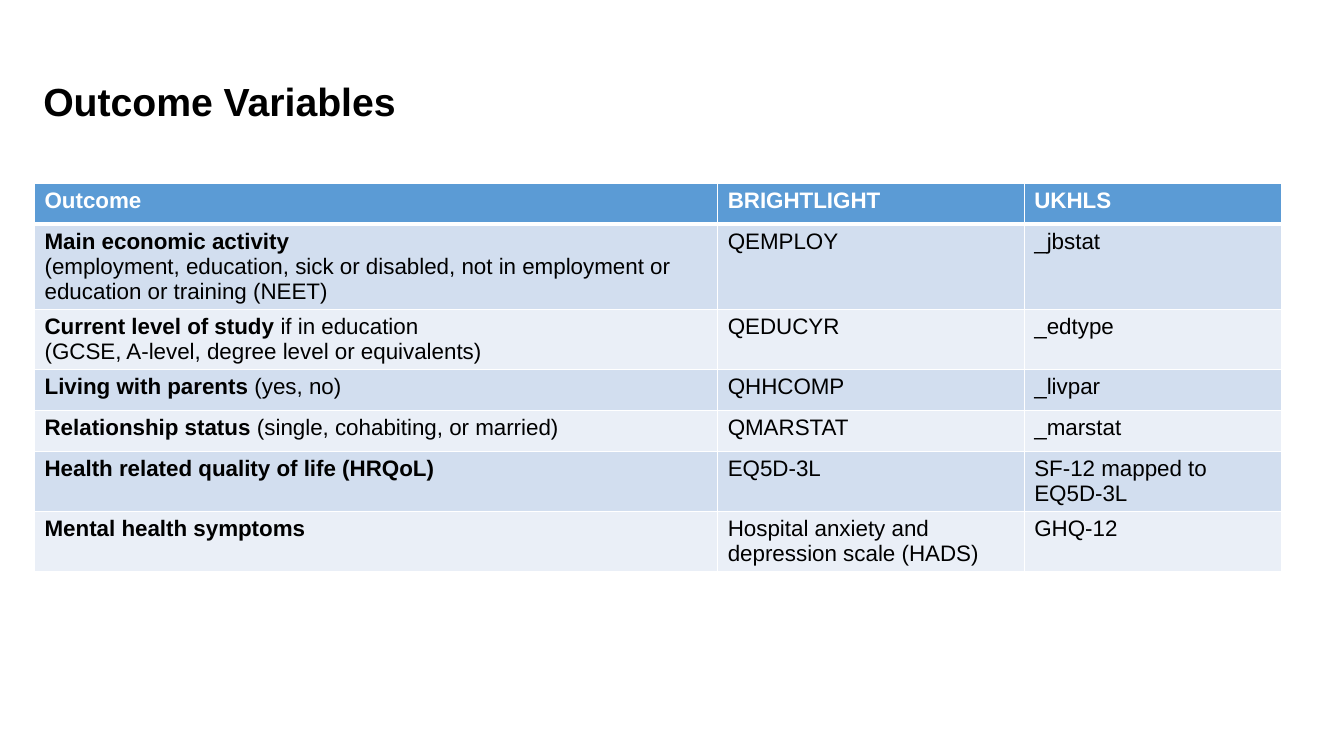
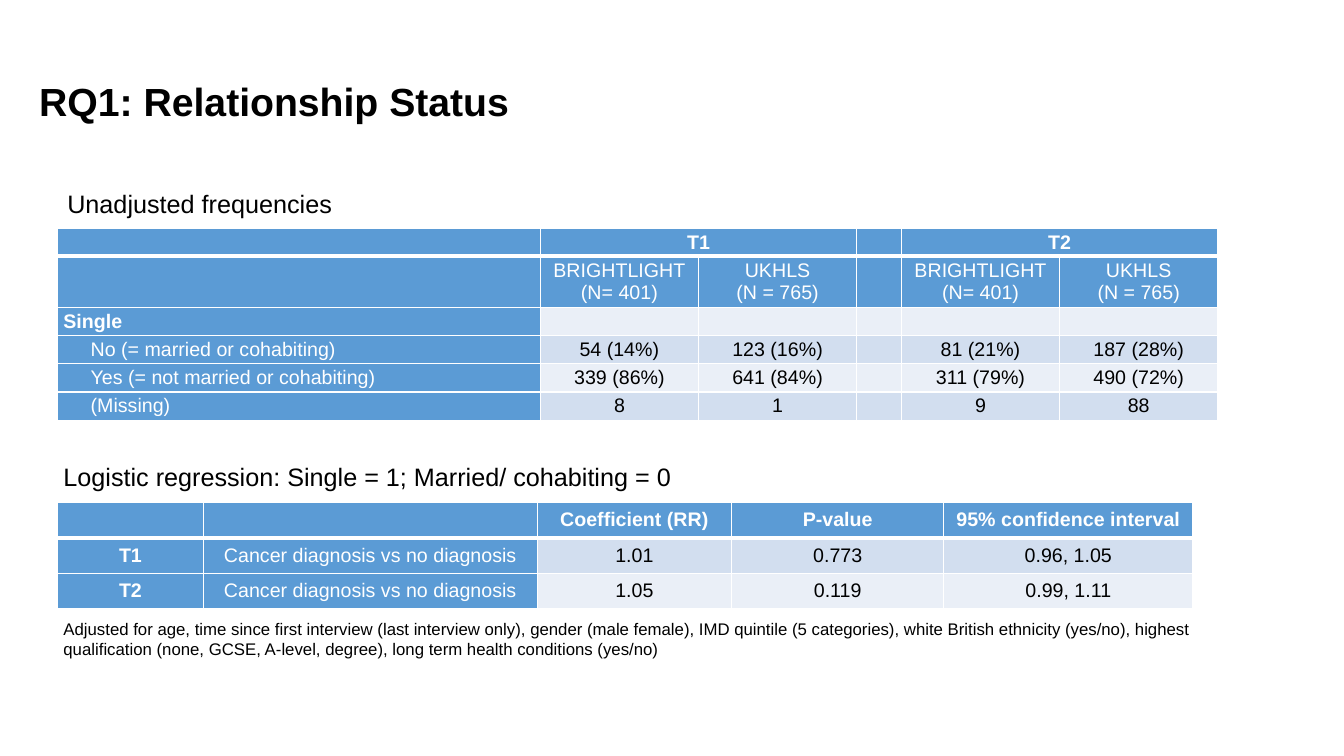
import dataclasses

import lxml.etree
import pptx
import pptx.dml.color
import pptx.enum.text
import pptx.oxml.ns
import pptx.util

Pt = pptx.util.Pt
RGB = pptx.dml.color.RGBColor.from_string
qn = pptx.oxml.ns.qn
ALIGN = pptx.enum.text.PP_ALIGN
ANCHOR = pptx.enum.text.MSO_ANCHOR


@dataclasses.dataclass(frozen=True)
class Theme:
    font: str = "Arial"
    ink: str = "000000"
    paper: str = "FFFFFF"
    accent: str = "5B9BD5"
    bands: tuple = ("EAEFF7", "D2DEEF")
    title: int = 28
    caption: int = 18
    table: int = 16
    compact: int = 14
    note: int = 12
    rule: int = 1
    header_rule: int = 3


THEME = Theme()
ROOMY = {
    "size": THEME.table,
    "align": ALIGN.LEFT,
    "cell": {"vertical_anchor": ANCHOR.TOP},
}
COMPACT = {
    "size": THEME.compact,
    "align": ALIGN.CENTER,
    "cell": {
        "vertical_anchor": ANCHOR.MIDDLE,
        "margin_left": Pt(4.3),
        "margin_right": Pt(4.3),
        "margin_top": Pt(1.4),
        "margin_bottom": Pt(1.4),
    },
}

OUTCOMES = [
    ["Outcome", "BRIGHTLIGHT", "UKHLS"],
    ["Main economic activity|\n(employment, education, sick or disabled, "
     "not in employment or education or training (NEET)", "QEMPLOY", "_jbstat"],
    ["Current level of study |if in education\n"
     "(GCSE, A-level, degree level or equivalents)", "QEDUCYR", "_edtype"],
    ["Living with parents |(yes, no)", "QHHCOMP", "_livpar"],
    ["Relationship status |(single, cohabiting, or married)", "QMARSTAT", "_marstat"],
    ["Health related quality of life (HRQoL)|", "EQ5D-3L", "SF-12 mapped to EQ5D-3L"],
    ["Mental health symptoms|", "Hospital anxiety and depression scale (HADS)", "GHQ-12"],
]
GROUPS = ["BRIGHTLIGHT\n(N= 401)", "UKHLS\n(N = 765)"]
FREQUENCIES = [
    ["", "T1", "", "", "T2", ""],
    ["", *GROUPS, "", *GROUPS],
    ["Single|", "", "", "", "", ""],
    ["No (= married or cohabiting)", "54 (14%)", "123 (16%)", "", "81 (21%)", "187 (28%)"],
    ["Yes (= not married or cohabiting)", "339 (86%)", "641 (84%)", "", "311 (79%)", "490 (72%)"],
    ["(Missing)", "8", "1", "", "9", "88"],
]
COMPARISON = "Cancer diagnosis vs no diagnosis"
REGRESSION = [
    ["", "", "Coefficient (RR)", "P-value", "95% confidence interval"],
    ["T1|", COMPARISON, "1.01", "0.773", "0.96, 1.05"],
    ["T2|", COMPARISON, "1.05", "0.119", "0.99, 1.11"],
]
ADJUSTMENT = (
    "Adjusted for age, time since first interview (last interview only), gender (male female), "
    "IMD quintile (5 categories), white British ethnicity (yes/no), highest qualification "
    "(none, GCSE, A-level, degree), long term health conditions (yes/no)"
)


def set_all(target, values):
    for name, value in values.items():
        setattr(target, name, value)


def add_span(para, text, size, color, bold=False):
    span = para.add_run()
    span.text = text
    set_all(span.font, {"name": THEME.font, "size": Pt(size), "bold": bold})
    span.font.color.rgb = RGB(color)


def add_text(slide, left, top, width, height, text, size, bold=False, anchor=ANCHOR.TOP):
    box = slide.shapes.add_textbox(Pt(left), Pt(top), Pt(width), Pt(height))
    set_all(box.text_frame, {"word_wrap": True, "vertical_anchor": anchor})
    add_span(box.text_frame.paragraphs[0], text, size, THEME.ink, bold)


def add_title(slide, left, text):
    add_text(slide, left, 39.6, 586, 65.5, text, THEME.title, True, ANCHOR.MIDDLE)


def set_borders(cell, weights):
    """Draw left, right, top and bottom rules of the given weights."""
    properties = cell._tc.get_or_add_tcPr()
    for side, weight in zip("LRTB", weights):
        line = lxml.etree.SubElement(properties, qn("a:ln" + side), w=str(Pt(weight)))
        fill = lxml.etree.SubElement(line, qn("a:solidFill"))
        lxml.etree.SubElement(fill, qn("a:srgbClr"), val=THEME.paper)


def write_cell(cell, text, look, color, bold):
    """Write one paragraph a line; the part of a line before a bar is bold."""
    for index, line in enumerate(text.split("\n")):
        frame = cell.text_frame
        para = frame.add_paragraph() if index else frame.paragraphs[0]
        para.alignment = look["align"]
        strong, bar, plain = line.rpartition("|")
        if strong:
            add_span(para, strong, look["size"], color, True)
        if plain:
            add_span(para, plain, look["size"], color, bold)
        if not line:
            lxml.etree.SubElement(para._p, qn("a:endParaRPr"), sz=str(look["size"] * 100))


def add_table(slide, left, top, widths, heights, rows, look, header_rows=1, label_columns=0):
    frame = slide.shapes.add_table(
        len(rows), len(widths), Pt(left), Pt(top), Pt(sum(widths)), Pt(sum(heights)))
    table = frame.table
    table.horz_banding = False
    for column, width in zip(table.columns, widths):
        column.width = Pt(width)
    for row_index, (row, height, texts) in enumerate(zip(table.rows, heights, rows)):
        row.height = Pt(height)
        above = THEME.header_rule if row_index == 1 else THEME.rule
        below = THEME.header_rule if row_index == 0 else THEME.rule
        for column_index, (cell, text) in enumerate(zip(row.cells, texts)):
            heading = row_index < header_rows or column_index < label_columns
            set_all(cell, look["cell"])
            set_borders(cell, (THEME.rule, THEME.rule, above, below))
            cell.fill.solid()
            cell.fill.fore_color.rgb = RGB(THEME.accent if heading else THEME.bands[row_index % 2])
            write_cell(cell, text, look, THEME.paper if heading else THEME.ink, row_index == 0)
    return table


def build_outcomes(slide):
    add_table(slide, 24.7, 131, [488, 219, 184], [29.2, 61, 43, 29.2, 29.2, 43, 43],
              OUTCOMES, ROOMY)
    add_title(slide, 23.8, "Outcome Variables")


def build_relationship_status(slide):
    add_title(slide, 20.9, "RQ1: Relationship Status")
    add_text(slide, 41, 131, 431, 29, "Unadjusted frequencies", THEME.caption)
    table = add_table(slide, 41, 163.4, [345, 113, 113, 32, 113, 113],
                      [18.6, 36.4] + [20.2] * 4, FREQUENCIES, COMPACT, 2, 1)
    for first in (1, 4):
        table.cell(0, first).merge(table.cell(0, first + 1))
    for row_index in range(2, len(FREQUENCIES)):
        label = table.cell(row_index, 0)
        label.text_frame.paragraphs[0].alignment = ALIGN.LEFT
        if row_index > 2:
            label.margin_left = Pt(23.8)
    add_text(slide, 38.2, 326, 836, 29,
             "Logistic regression: Single = 1; Married/ cohabiting = 0", THEME.caption)
    add_table(slide, 41, 358.8, [104.4, 238.3, 139, 151.5, 178], [25.3] * 3,
              REGRESSION, COMPACT, label_columns=2)
    add_text(slide, 38.2, 438.5, 830, 36, ADJUSTMENT, THEME.note)


def main():
    deck = pptx.Presentation()
    set_all(deck, {"slide_width": Pt(960), "slide_height": Pt(540)})
    for build in (build_outcomes, build_relationship_status):
        build(deck.slides.add_slide(deck.slide_layouts[6]))
    deck.save("out.pptx")


if __name__ == "__main__":
    main()
